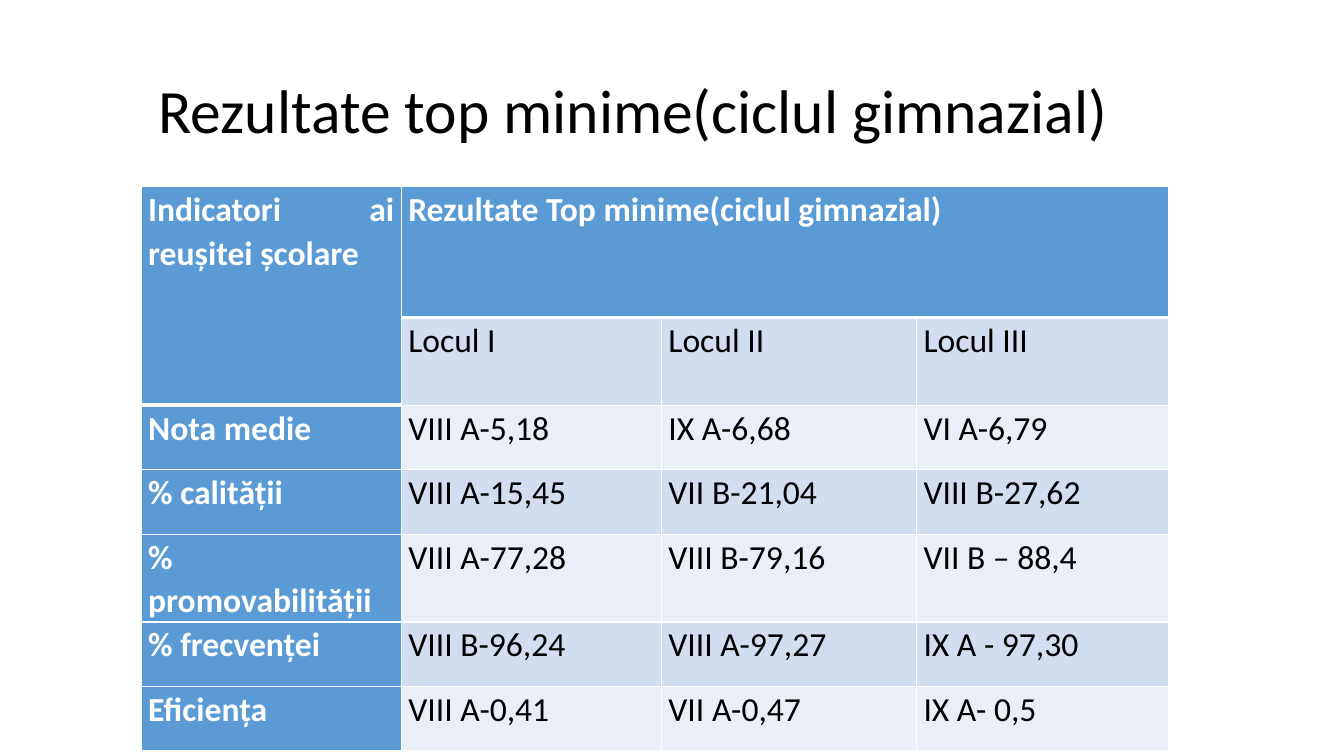
from lxml.etree import SubElement
from pptx import Presentation
from pptx.dml.color import RGBColor
from pptx.enum.text import MSO_ANCHOR, PP_ALIGN
from pptx.oxml.ns import qn
from pptx.util import Inches, Pt

COLORS = {"white": "FFFFFF", "black": "000000", "blue": "5B9BD5",
          "band": "D2DEEF", "pale": "EAEFF7"}
TITLE = "Rezultate top minime(ciclul gimnazial)"
HEAD = "Rezultate Top minime(ciclul gimnazial)"
ROWS = [
    ["Indicatori ai reușitei școlare", HEAD, "", ""],
    ["", "Locul I", "Locul II", "Locul III"],
    ["Nota medie", "VIII A-5,18", "IX A-6,68", "VI A-6,79"],
    ["% calității", "VIII A-15,45", "VII B-21,04", "VIII B-27,62"],
    ["% promovabilității", "VIII A-77,28", "VIII B-79,16", "VII B – 88,4"],
    ["% frecvenței", "VIII B-96,24", "VIII A-97,27", "IX A - 97,30"],
    ["Eficiența", "VIII A-0,41", "VII A-0,47", "IX A- 0,5"],
]
WIDTHS = [2.58, 2.58, 2.53, 2.5]
HEIGHTS = [1.3] + [0.64] * 6


def color(name):
    return RGBColor.from_string(COLORS[name])


def write(frame, text, size=24, ink="black", bold=False,
          align=PP_ALIGN.JUSTIFY, space=1.07):
    para = frame.paragraphs[0]
    para.alignment = align
    para.line_spacing = space
    run = para.add_run()
    run.text = text
    font = run.font
    font.name = "Calibri"
    font.size = Pt(size)
    font.bold = bold
    font.color.rgb = color(ink)


def add_title(slide):
    title = slide.shapes.title
    title.left, title.top = Inches(0.92), Inches(0.4)
    title.width, title.height = Inches(11.5), Inches(1.45)
    frame = title.text_frame
    frame.vertical_anchor = MSO_ANCHOR.MIDDLE
    frame.margin_left = Inches(0.65)
    write(frame, TITLE, size=44, align=PP_ALIGN.LEFT, space=0.9)


def add_edges(cell, **widths):
    props = cell._tc.get_or_add_tcPr()
    for side in "LRTB":
        line = SubElement(props, qn("a:ln" + side), w=str(Pt(widths.get(side, 1))))
        fill = SubElement(line, qn("a:solidFill"))
        SubElement(fill, qn("a:srgbClr"), val=COLORS["white"])


def style_cell(cell, row, col, text):
    head = row == 0 or col == 0
    last = 1 if col == 0 else 0
    add_edges(cell, T=3 if row == last + 1 else 1,
              B=3 if row == last or row + col == 0 else 1)
    cell.fill.solid()
    cell.fill.fore_color.rgb = color(
        "blue" if head else "band" if row % 2 else "pale")
    cell.margin_left = cell.margin_right = Inches(0.07)
    cell.margin_top = cell.margin_bottom = 0
    if text:
        write(cell.text_frame, text, ink="white" if head else "black", bold=head)


def add_grid(slide):
    grid = slide.shapes.add_table(
        len(ROWS), len(WIDTHS), Inches(1.4), Inches(1.85),
        Inches(sum(WIDTHS)), Inches(sum(HEIGHTS))).table
    for col, width in zip(grid.columns, WIDTHS):
        col.width = Inches(width)
    for row, height in zip(grid.rows, HEIGHTS):
        row.height = Inches(height)
    grid.cell(0, 0).merge(grid.cell(1, 0))
    grid.cell(0, 1).merge(grid.cell(0, 3))
    for row, texts in enumerate(ROWS):
        for col, text in enumerate(texts):
            style_cell(grid.cell(row, col), row, col, text)


def main():
    deck = Presentation()
    deck.slide_width, deck.slide_height = Inches(13.33), Inches(7.5)
    slide = deck.slides.add_slide(deck.slide_layouts[5])
    add_title(slide)
    add_grid(slide)
    deck.save("out.pptx")


if __name__ == "__main__":
    main()
